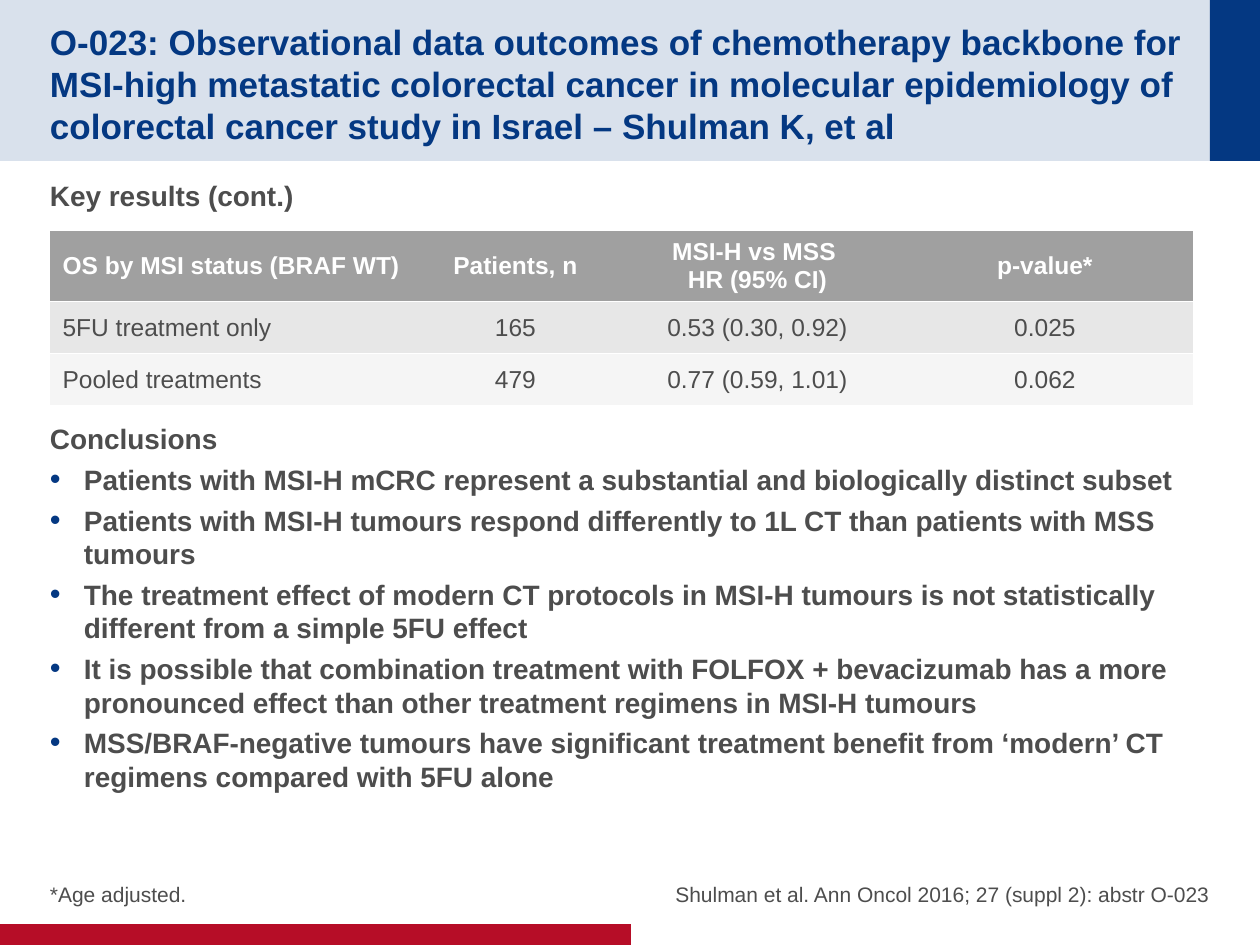
from dataclasses import dataclass

from lxml import etree
from pptx import Presentation
from pptx.dml.color import RGBColor
from pptx.enum.shapes import MSO_SHAPE
from pptx.enum.text import MSO_ANCHOR, PP_ALIGN
from pptx.oxml.ns import qn
from pptx.util import Emu, Pt

PX = 914400 / 126
FONT = "Arial"
NAVY = RGBColor(0x04, 0x38, 0x82)
PALE_BLUE = RGBColor(0xD9, 0xE1, 0xEC)
RED = RGBColor(0xB6, 0x0D, 0x27)
TEXT = RGBColor(0x4D, 0x4D, 0x4D)
WHITE = RGBColor(0xFF, 0xFF, 0xFF)
HEADER_GREY = RGBColor(0xA0, 0xA0, 0xA0)
ROW_FILLS = [HEADER_GREY, RGBColor(0xE7, 0xE7, 0xE7), RGBColor(0xF5, 0xF5, 0xF5)]
RECT = MSO_SHAPE.RECTANGLE
LEFT, CENTER, RIGHT = PP_ALIGN.LEFT, PP_ALIGN.CENTER, PP_ALIGN.RIGHT
TOP, MIDDLE, BOTTOM = MSO_ANCHOR.TOP, MSO_ANCHOR.MIDDLE, MSO_ANCHOR.BOTTOM


def px(n: int) -> Emu:
    return Emu(round(n * PX))


@dataclass
class Box:
    x: int
    y: int
    w: int
    h: int

    def emu(self) -> list[Emu]:
        return [px(n) for n in (self.x, self.y, self.w, self.h)]


@dataclass
class TextBlock:
    box: Box
    lines: list[str]
    size: int
    color: RGBColor = TEXT
    bold: bool = True
    align: PP_ALIGN = LEFT
    anchor: MSO_ANCHOR = TOP
    inset_top: int = 6
    bullets_from: int = 99  # index of the first bulleted line


BANDS = [
    (Box(0, 0, 1260, 161), PALE_BLUE),
    (Box(1210, 0, 50, 161), NAVY),
    (Box(0, 924, 631, 21), RED),
]

CONCLUSIONS = [
    "Conclusions",
    "Patients with MSI-H mCRC represent a substantial and biologically distinct subset",
    "Patients with MSI-H tumours respond differently to 1L CT than patients with MSS tumours",
    "The treatment effect of modern CT protocols in MSI-H tumours is not statistically "
    "different from a simple 5FU effect",
    "It is possible that combination treatment with FOLFOX + bevacizumab has a more "
    "pronounced effect than other treatment regimens in MSI-H tumours",
    "MSS/BRAF-negative tumours have significant treatment benefit from ‘modern’ CT "
    "regimens compared with 5FU alone",
]

TEXTS = [
    TextBlock(
        Box(50, 25, 1135, 111),
        ["O-023: Observational data outcomes of chemotherapy backbone for MSI-high "
         "metastatic colorectal cancer in molecular epidemiology of colorectal cancer "
         "study in Israel – Shulman K, et al"],
        20, NAVY, anchor=MIDDLE),
    TextBlock(Box(50, 173, 1160, 50), ["Key results (cont.)"], 16),
    TextBlock(Box(50, 416, 1160, 410), CONCLUSIONS, 16, bullets_from=1),
    TextBlock(Box(50, 840, 570, 67), ["*Age adjusted."], 12,
              bold=False, anchor=BOTTOM, inset_top=0),
    TextBlock(Box(543, 840, 667, 67),
              ["Shulman et al. Ann Oncol 2016; 27 (suppl 2): abstr O-023"], 12,
              bold=False, align=RIGHT, anchor=BOTTOM, inset_top=0),
]

TABLE_X, TABLE_Y = 50, 230
COLS = [363, 205, 279, 296]
ROWS = [68, 52, 52]
CELLS = [
    ["OS by MSI status (BRAF WT)", "Patients, n", "MSI-H vs MSS \vHR (95% CI)", "p-value*"],
    ["5FU treatment only", "165", "0.53 (0.30, 0.92)", "0.025"],
    ["Pooled treatments", "479", "0.77 (0.59, 1.01)", "0.062"],
]


def style(p, size: int, color: RGBColor, bold: bool, align: PP_ALIGN) -> None:
    p.alignment = align
    p.font.name = FONT
    p.font.size = Pt(size)
    p.font.bold = bold
    p.font.color.rgb = color


def add_bullet(p) -> None:
    pPr = p._p.get_or_add_pPr()
    pPr.set("marL", str(px(34)))
    pPr.set("indent", str(-px(34)))
    clr = etree.Element(qn("a:buClr"))
    etree.SubElement(clr, qn("a:srgbClr"), val=str(NAVY))
    parts = [
        clr,
        etree.Element(qn("a:buSzPct"), val="110000"),
        etree.Element(qn("a:buFont"), typeface=FONT),
        etree.Element(qn("a:buChar"), char="•"),
    ]
    at = list(pPr).index(pPr.find(qn("a:defRPr")))
    pPr[at:at] = parts


def add_band(slide, box: Box, color: RGBColor) -> None:
    sp = slide.shapes.add_shape(RECT, *box.emu())
    sp.shadow.inherit = False
    sp.fill.solid()
    sp.fill.fore_color.rgb = color
    sp.line.fill.background()


def add_text(slide, block: TextBlock) -> None:
    tf = slide.shapes.add_textbox(*block.box.emu()).text_frame
    tf.word_wrap = True
    tf.vertical_anchor = block.anchor
    tf.margin_left = tf.margin_right = tf.margin_bottom = 0
    tf.margin_top = px(block.inset_top)
    for i, line in enumerate(block.lines):
        p = tf.add_paragraph() if i else tf.paragraphs[0]
        p.text = line
        style(p, block.size, block.color, block.bold, block.align)
        p.space_after = Pt(4)
        if i >= block.bullets_from:
            add_bullet(p)


def set_borders(cell) -> None:
    """White rules above and below, none at the sides."""
    tcPr = cell._tc.get_or_add_tcPr()
    for i, side in enumerate(("lnL", "lnR", "lnT", "lnB")):
        ln = etree.Element(qn(f"a:{side}"), w=str(Pt(1)))
        if side in ("lnL", "lnR"):
            etree.SubElement(ln, qn("a:noFill"))
        else:
            fill = etree.SubElement(ln, qn("a:solidFill"))
            etree.SubElement(fill, qn("a:srgbClr"), val=str(WHITE))
        tcPr.insert(i, ln)


def add_results_table(slide) -> None:
    box = Box(TABLE_X, TABLE_Y, sum(COLS), sum(ROWS))
    table = slide.shapes.add_table(len(ROWS), len(COLS), *box.emu()).table
    for col, width in zip(table.columns, COLS):
        col.width = px(width)
    for r, (height, fill, texts) in enumerate(zip(ROWS, ROW_FILLS, CELLS)):
        table.rows[r].height = px(height)
        header = r == 0
        for c, text in enumerate(texts):
            cell = table.cell(r, c)
            cell.text = text
            cell.vertical_anchor = MIDDLE
            cell.fill.solid()
            cell.fill.fore_color.rgb = fill
            set_borders(cell)
            for p in cell.text_frame.paragraphs:
                style(p, 14, WHITE if header else TEXT, header, CENTER if c else LEFT)


def main() -> None:
    prs = Presentation()
    prs.slide_width, prs.slide_height = px(1260), px(945)
    slide = prs.slides.add_slide(prs.slide_layouts[6])

    # Coloured bands
    for box, color in BANDS:
        add_band(slide, box, color)

    # Title, body and footnotes
    for block in TEXTS:
        add_text(slide, block)

    # Survival results
    add_results_table(slide)

    prs.save("out.pptx")


if __name__ == "__main__":
    main()
